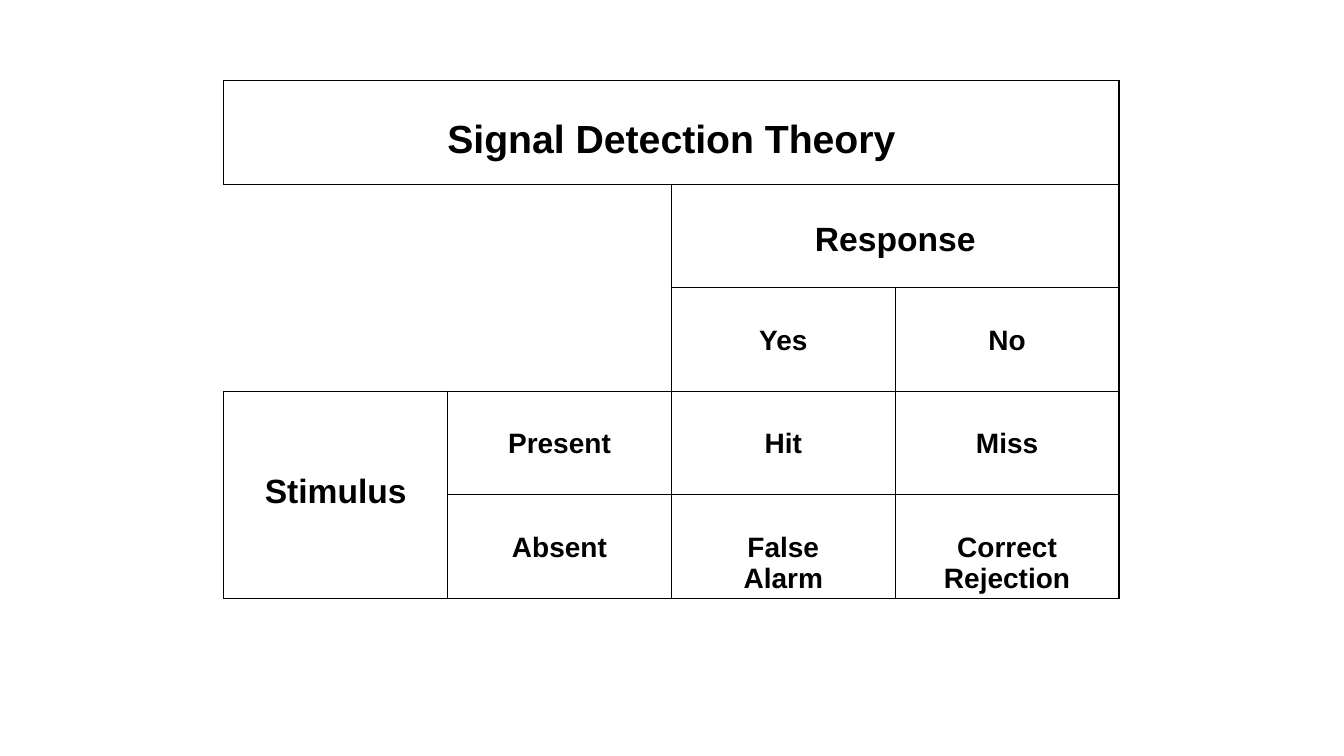
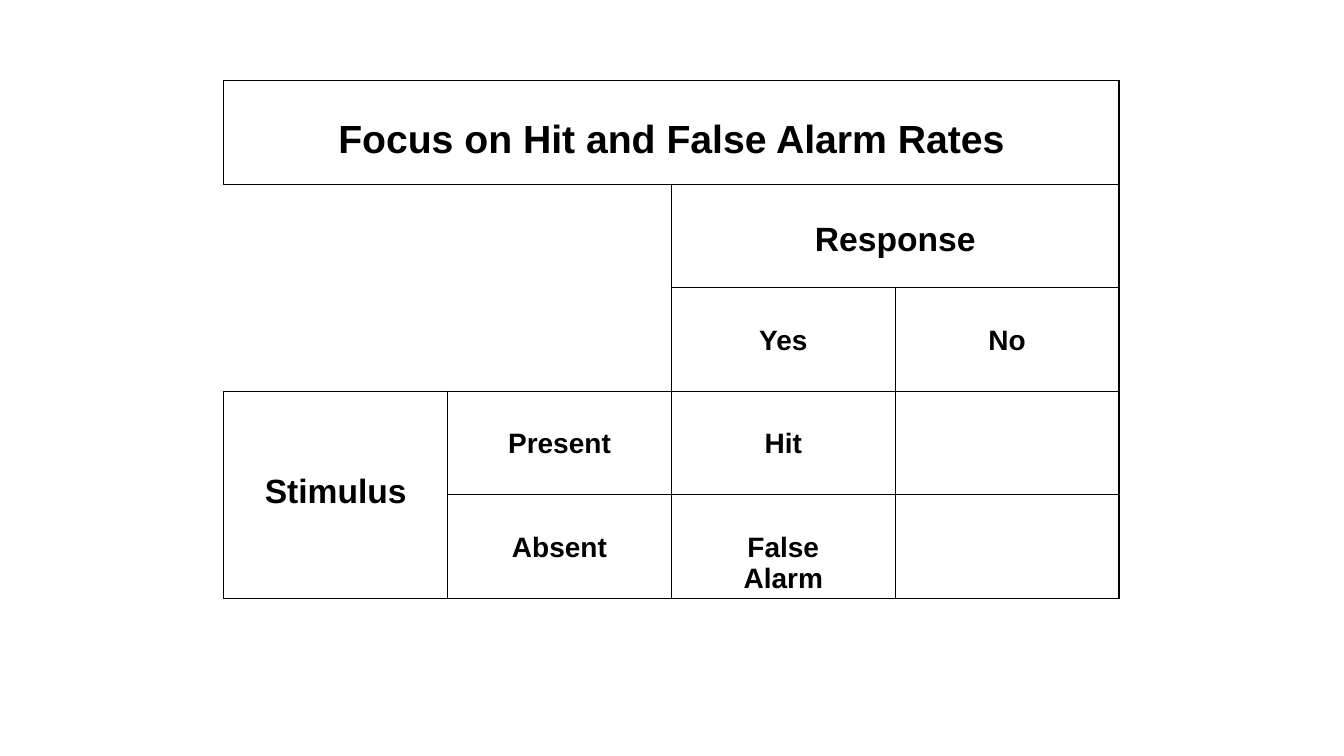
from dataclasses import dataclass

from lxml.etree import SubElement
from pptx import Presentation
from pptx.dml.color import RGBColor
from pptx.enum.text import PP_ALIGN
from pptx.oxml.ns import qn
from pptx.presentation import Presentation as Deck
from pptx.table import Table, _Cell
from pptx.util import Cm, Pt

# Shared style
BLACK = RGBColor(0x00, 0x00, 0x00)
FONT = "Arial"
BORDER_WIDTH = Pt(1)
TITLE_SIZE, HEADING_SIZE, BODY_SIZE = 28, 24, 20

# Shared grid
ROWS, COLUMNS = 5, 4
LEFT, TOP = Cm(5.64), Cm(2.03)
COLUMN_WIDTH, ROW_HEIGHT = Cm(5.64), Cm(2.61)
TEXT_DROP, TALL_TEXT_DROP = Cm(0.94), Cm(2.07)
SIDES = {"a:lnL": (0, -1), "a:lnR": (0, 1), "a:lnT": (-1, 0), "a:lnB": (1, 0)}


@dataclass(frozen=True)
class Entry:
    row: int
    column: int
    lines: tuple[str, ...]
    size: int = BODY_SIZE
    row_span: int = 1
    column_span: int = 1


HEADINGS = (
    Entry(1, 2, ("Response",), HEADING_SIZE, column_span=2),
    Entry(2, 2, ("Yes",)),
    Entry(2, 3, ("No",)),
    Entry(3, 0, ("Stimulus",), HEADING_SIZE, row_span=2),
    Entry(3, 1, ("Present",)),
    Entry(4, 1, ("Absent",)),
)
YES_OUTCOMES = (Entry(3, 2, ("Hit",)), Entry(4, 2, ("False", "Alarm")))
NO_OUTCOMES = (Entry(3, 3, ("Miss",)), Entry(4, 3, ("Correct", "Rejection")))


def is_open(row: int, column: int) -> bool:
    """The corner between the two headings has no lines of its own."""
    return row in (1, 2) and column in (0, 1)


def is_boxed(row: int, column: int) -> bool:
    inside = 0 <= row < ROWS and 0 <= column < COLUMNS
    return inside and not is_open(row, column)


def style_cell(cell: _Cell, row: int, column: int) -> None:
    properties = cell._tc.get_or_add_tcPr()
    for tag, (row_step, column_step) in SIDES.items():
        line = SubElement(properties, qn(tag), w=str(BORDER_WIDTH))
        if is_boxed(row, column) or is_boxed(row + row_step, column + column_step):
            fill = SubElement(line, qn("a:solidFill"))
            SubElement(fill, qn("a:srgbClr"), val=str(BLACK))
        else:
            SubElement(line, qn("a:noFill"))
    cell.fill.background()
    cell.margin_bottom = 0


def write_entry(table: Table, entry: Entry) -> None:
    cell = table.cell(entry.row, entry.column)
    if entry.row_span > 1 or entry.column_span > 1:
        cell.merge(table.cell(entry.row + entry.row_span - 1,
                              entry.column + entry.column_span - 1))
    cell.margin_top = TALL_TEXT_DROP if entry.row_span > 1 else TEXT_DROP
    frame = cell.text_frame
    for index, text in enumerate(entry.lines):
        paragraph = frame.add_paragraph() if index else frame.paragraphs[0]
        paragraph.alignment = PP_ALIGN.CENTER
        run = paragraph.add_run()
        run.text = text
        run.font.name = FONT
        run.font.size = Pt(entry.size)
        run.font.bold = True
        run.font.color.rgb = BLACK


def add_matrix_slide(presentation: Deck, title: str,
                     outcomes: tuple[Entry, ...]) -> None:
    slide = presentation.slides.add_slide(presentation.slide_layouts[6])
    table = slide.shapes.add_table(ROWS, COLUMNS, LEFT, TOP,
                                   COLUMN_WIDTH * COLUMNS, ROW_HEIGHT * ROWS).table
    table.first_row = False
    table.horz_banding = False

    # Borders and fills
    for row in range(ROWS):
        for column in range(COLUMNS):
            style_cell(table.cell(row, column), row, column)

    # Title, headings and outcomes
    title_entry = Entry(0, 0, (title,), TITLE_SIZE, column_span=COLUMNS)
    for entry in (title_entry, *HEADINGS, *outcomes):
        write_entry(table, entry)


def main() -> None:
    presentation = Presentation()
    presentation.slide_width, presentation.slide_height = Cm(33.87), Cm(19.05)
    add_matrix_slide(presentation, "Signal Detection Theory",
                     YES_OUTCOMES + NO_OUTCOMES)
    add_matrix_slide(presentation, "Focus on Hit and False Alarm Rates",
                     YES_OUTCOMES)
    presentation.save("out.pptx")


if __name__ == "__main__":
    main()
